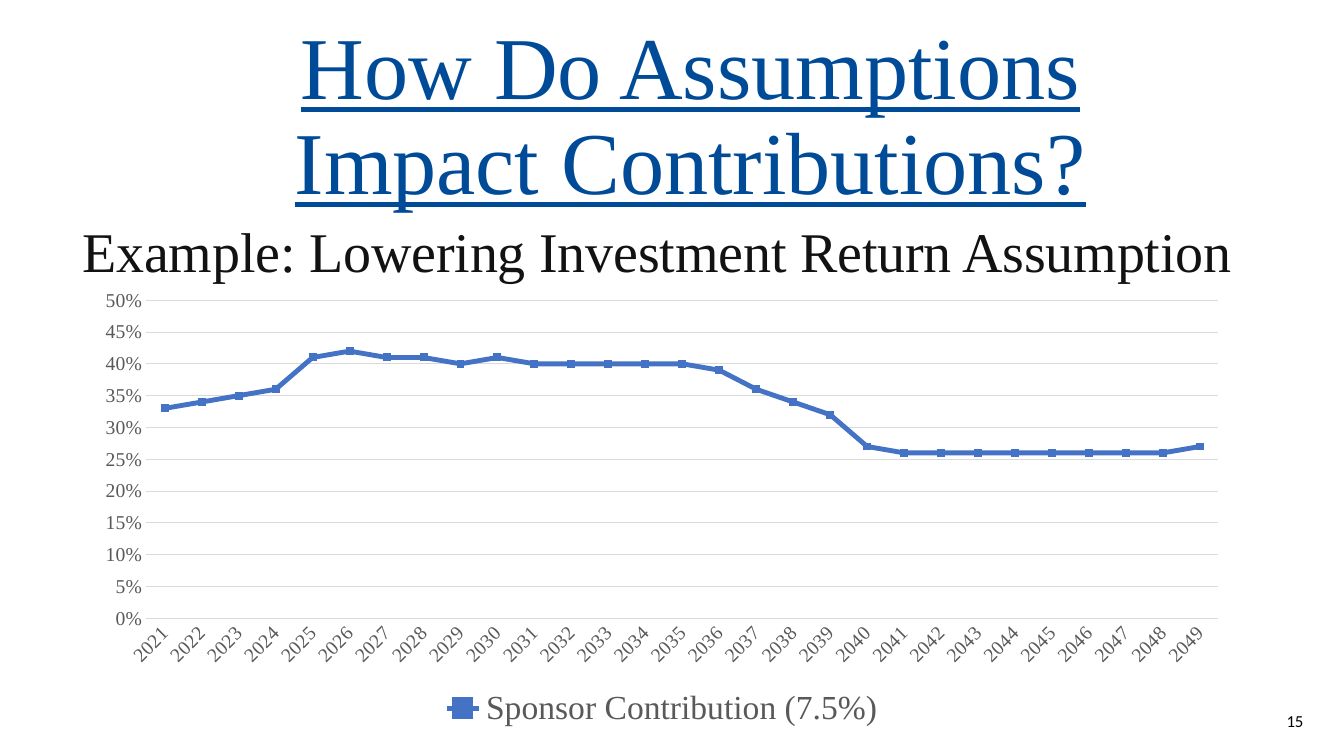
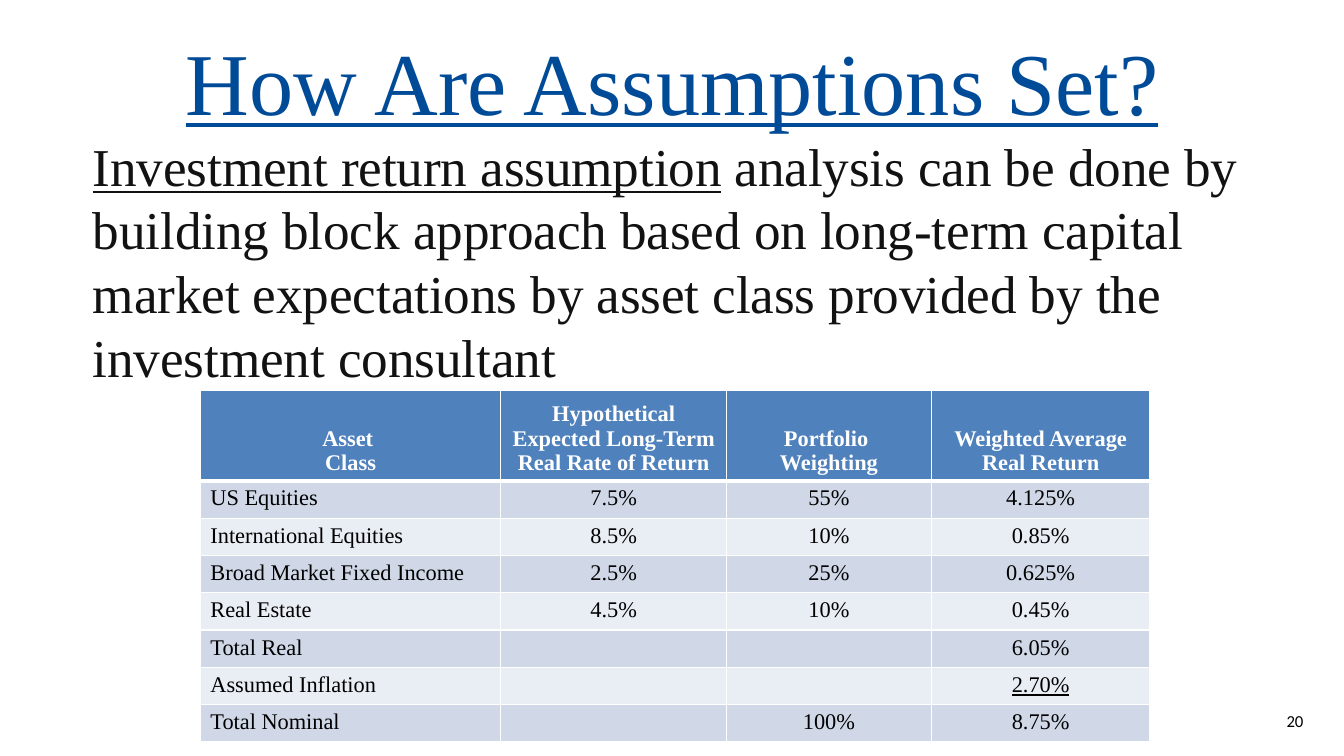
from lxml import etree
from pptx import Presentation
from pptx.chart.data import CategoryChartData
from pptx.dml.color import RGBColor
from pptx.enum.chart import XL_CHART_TYPE, XL_LEGEND_POSITION, XL_TICK_MARK
from pptx.enum.text import MSO_ANCHOR, MSO_AUTO_SIZE, PP_ALIGN
from pptx.oxml.ns import qn
from pptx.util import Cm, Pt

LINE, BOTTOM_LEGEND = XL_CHART_TYPE.LINE, XL_LEGEND_POSITION.BOTTOM
NO_TICK, NO_AUTOFIT = XL_TICK_MARK.NONE, MSO_AUTO_SIZE.NONE
LEFT, CENTER, RIGHT = PP_ALIGN.LEFT, PP_ALIGN.CENTER, PP_ALIGN.RIGHT
TOP, MIDDLE, BOTTOM = MSO_ANCHOR.TOP, MSO_ANCHOR.MIDDLE, MSO_ANCHOR.BOTTOM

SERIF = "Times New Roman"
WHITE, BLACK, GRAY, GRID = "FFFFFF", "000000", "595959", "D9D9D9"
SERIES_BLUE, HEADER_BLUE = "4472C4", "4F81BD"
BANDS = ["D0D8E8", "E9EDF4"]

TITLE = {"name": SERIF, "size": Pt(63), "color": "004B98", "underline": True}
NUMBER = {"name": "Calibri", "size": Pt(12), "color": BLACK}
AXIS = {"name": SERIF, "size": Pt(14), "color": GRAY}
LEGEND = AXIS | {"size": Pt(24)}
CELL = {"name": SERIF, "size": Pt(16), "color": BLACK, "bold": False}
HEADER = CELL | {"color": WHITE, "bold": True}


def rgb(value):
    return RGBColor.from_string(value)


def set_font(font, formats):
    for name, value in formats.items():
        if name == "color":
            font.color.rgb = rgb(value)
        else:
            setattr(font, name, value)


# What each slide holds: title, its box, body runs, their size and box, page number
slides = [
    ("How Do Assumptions Impact Contributions?", (4.34, 0.46, 26.11, 4.95),
     [("Example: Lowering Investment Return Assumption", False)],
     40, (2.08, 4.93, 29.21, 2.24), "15"),
    ("How Are Assumptions Set?", (1.7, 0.86, 30.48, 2.21),
     [("Investment return assumption", True),
      (" analysis can be done by building block approach based on long-term "
       "capital market expectations by asset class provided by the investment "
       "consultant", False)],
     38, (2.34, 2.82, 29.21, 7.04), "20"),
]

presentation = Presentation()
presentation.slide_width, presentation.slide_height = Cm(33.87), Cm(19.05)
title_only = presentation.slide_layouts[5]

for title_text, title_box, body_runs, body_size, body_box, number in slides:
    slide = presentation.slides.add_slide(title_only)

    title = slide.shapes.title
    title.left, title.top, title.width, title.height = map(Cm, title_box)
    title.text_frame.auto_size = NO_AUTOFIT
    title.text_frame.vertical_anchor = TOP
    title.text_frame.text = title_text
    paragraph = title.text_frame.paragraphs[0]
    paragraph.alignment, paragraph.line_spacing = CENTER, 0.9
    set_font(paragraph.runs[0].font, TITLE)

    body = slide.shapes.add_textbox(*map(Cm, body_box)).text_frame
    body.word_wrap = True
    body.margin_left = body.margin_right = body.margin_bottom = 0
    body.margin_top = Cm(0.53)
    for text, underlined in body_runs:
        run = body.paragraphs[0].add_run()
        run.text = text
        set_font(run.font, {"name": SERIF, "size": Pt(body_size),
                            "color": "131212", "underline": underlined})
        run.font._element.set("spc", "-10")

    page = slide.shapes.add_textbox(
        Cm(27.18), Cm(17.65), Cm(5.92), Cm(1.02)).text_frame
    page.word_wrap, page.vertical_anchor = True, MIDDLE
    page.text = number
    page.paragraphs[0].alignment = RIGHT
    set_font(page.paragraphs[0].runs[0].font, NUMBER)

chart_slide, table_slide = presentation.slides

# Contribution chart
percents = [33, 34, 35, 36, 41, 42, 41, 41, 40, 41, 40, 40, 40, 40, 40,
            39, 36, 34, 32, 27, 26, 26, 26, 26, 26, 26, 26, 26, 27]
chart_data = CategoryChartData(number_format="0%")
chart_data.categories = [str(2021 + index) for index in range(len(percents))]
chart_data.add_series("Sponsor Contribution (7.5%)",
                      [percent / 100 for percent in percents])
chart = chart_slide.shapes.add_chart(
    LINE, Cm(2.08), Cm(7.06), Cm(29.21), Cm(11.43), chart_data).chart
set_font(chart.font, {"name": SERIF, "size": Pt(10), "color": BLACK})
chart.has_title = False
chart.has_legend = True
chart.legend.position = BOTTOM_LEGEND
chart.legend.include_in_layout = False
set_font(chart.legend.font, LEGEND)

years, rates = chart.category_axis, chart.value_axis
for axis in (years, rates):
    axis.major_tick_mark = axis.minor_tick_mark = NO_TICK
    set_font(axis.tick_labels.font, AXIS)
rates.minimum_scale, rates.maximum_scale, rates.major_unit = 0, 0.5, 0.05
rates.tick_labels.number_format = "0%"
rates.tick_labels.number_format_is_linked = False
rates.format.line.fill.background()
for line in (years.format.line, rates.major_gridlines.format.line):
    line.color.rgb, line.width = rgb(GRID), Pt(0.75)

plot = chart.plots[0]
plot.vary_by_categories = False
series = plot.series[0]
series.smooth = False
series.marker.style = None
series.format.line.color.rgb = rgb(SERIES_BLUE)
series.format.line.width = Pt(3.5)

# Asset class table
rows = [
    ("Asset \nClass", "Hypothetical Expected Long-Term Real Rate of Return",
     "Portfolio \nWeighting", "Weighted Average Real Return"),
    ("US Equities", "7.5%", "55%", "4.125%"),
    ("International Equities", "8.5%", "10%", "0.85%"),
    ("Broad Market Fixed Income", "2.5%", "25%", "0.625%"),
    ("Real Estate", "4.5%", "10%", "0.45%"),
    ("Total Real", "", "", "6.05%"),
    ("Assumed Inflation", "", "", "2.70%"),
    ("Total Nominal", "", "100%", "8.75%"),
]
column_widths = [7.57, 5.69, 5.16, 5.51]
header_height, row_height = 2.26, 0.94
table = table_slide.shapes.add_table(
    len(rows), len(column_widths), Cm(5.05), Cm(9.83), Cm(sum(column_widths)),
    Cm(header_height + row_height * (len(rows) - 1))).table
for column, width in zip(table.columns, column_widths):
    column.width = Cm(width)

for row_index, texts in enumerate(rows):
    is_header = row_index == 0
    table.rows[row_index].height = Cm(header_height if is_header else row_height)
    for column_index, text in enumerate(texts):
        cell = table.cell(row_index, column_index)
        cell.text = text
        cell.vertical_anchor = BOTTOM if is_header else TOP
        for paragraph in cell.text_frame.paragraphs:
            paragraph.alignment = CENTER if is_header or column_index else LEFT
            for run in paragraph.runs:
                set_font(run.font, HEADER if is_header else CELL)
                run.font.underline = text == "2.70%"
            if not text:
                end = etree.SubElement(paragraph._p, qn("a:endParaRPr"))
                end.set("sz", "1600")

        properties = cell._tc.get_or_add_tcPr()
        thick_side = {0: "lnB", 1: "lnT"}.get(row_index)
        for side in ("lnL", "lnR", "lnT", "lnB"):
            border = etree.SubElement(properties, qn("a:" + side))
            border.set("w", str(Pt(3 if side == thick_side else 1)))
            fill = etree.SubElement(border, qn("a:solidFill"))
            etree.SubElement(fill, qn("a:srgbClr")).set("val", WHITE)
        cell.fill.solid()
        cell.fill.fore_color.rgb = rgb(
            HEADER_BLUE if is_header else BANDS[(row_index - 1) % 2])

presentation.save("out.pptx")
